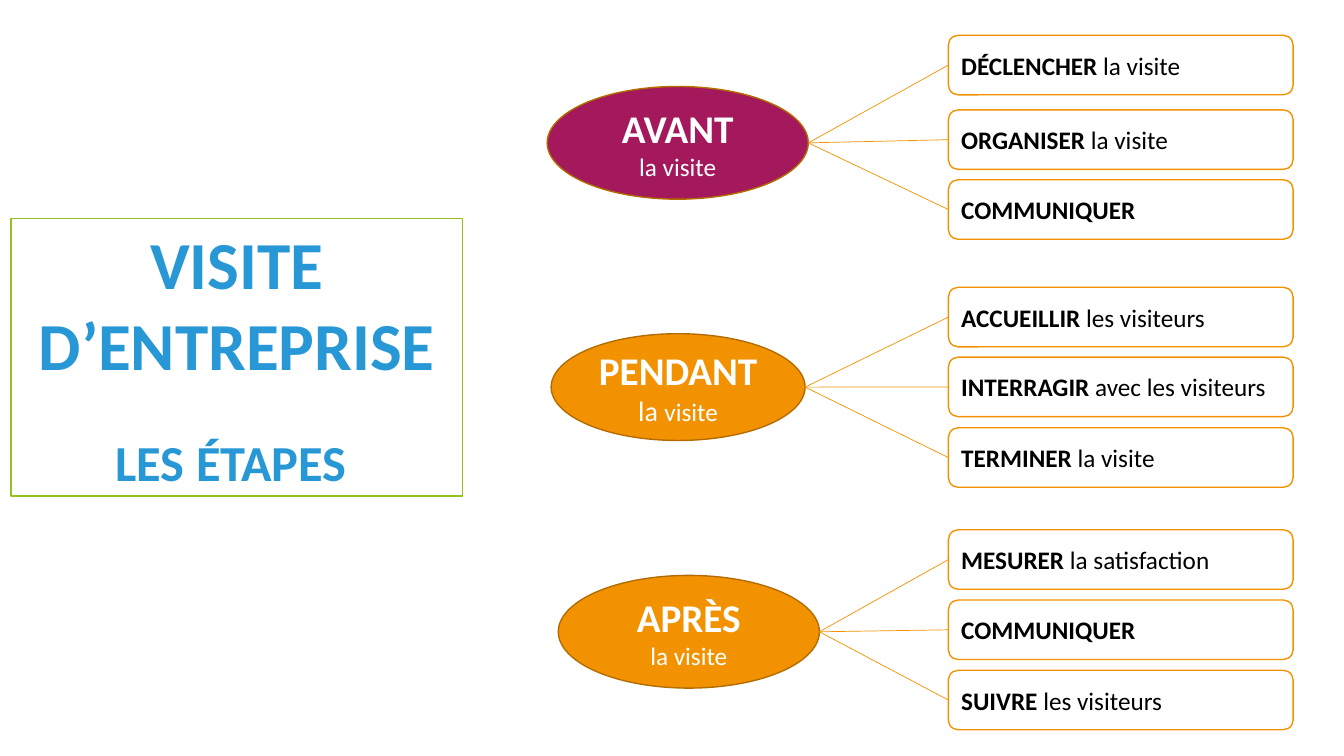
from lxml.etree import SubElement
from pptx import Presentation
from pptx.dml.color import RGBColor
from pptx.enum.shapes import MSO_CONNECTOR, MSO_SHAPE
from pptx.enum.text import MSO_ANCHOR, MSO_AUTO_SIZE, PP_ALIGN
from pptx.oxml.ns import qn
from pptx.util import Cm, Pt

COLORS = {
    "white": "FFFFFF", "black": "000000", "blue": "2897D5", "green": "95C11F",
    "orange": "F39200", "brown": "B46C00", "plum": "A3195B",
}
BOX_LEFT, BOX_WIDTH, BOX_HEIGHT = 23.9, 8.69, 1.5

# Each phase: name, (text, size) runs below it, fill, ellipse position, steps
PHASES = [
    ("AVANT", [("la visite", 18)], "plum", (13.79, 2.18, 6.58, 2.84),
     [(0.89, "DÉCLENCHER", " la visite"),
      (2.77, "ORGANISER", " la visite"),
      (4.53, "COMMUNIQUER", "")]),
    ("PENDANT", [("la ", 20), ("visite", 18)], "orange", (13.89, 8.41, 6.4, 2.69),
     [(7.24, "ACCUEILLIR", " les visiteurs"),
      (9.0, "INTERRAGIR", " avec les visiteurs"),
      (10.78, "TERMINER", " la visite")]),
    ("APRÈS", [("la visite", 18)], "orange", (14.07, 14.5, 6.58, 2.84),
     [(13.35, "MESURER", " la satisfaction"),
      (15.12, "COMMUNIQUER", ""),
      (16.89, "SUIVRE", " les visiteurs")]),
]


class StepMap:
    """Holds the style and the current slide."""

    font_name = "Calibri"

    def __init__(self, slide):
        self.slide = slide

    def color(self, name):
        return RGBColor.from_string(COLORS[name])

    def outline(self, shape, fill, line):
        shape.fill.solid()
        shape.fill.fore_color.rgb = self.color(fill)
        shape.line.color.rgb = self.color(line)
        shape.line.width = Pt(1)

    def add_text(self, paragraph, runs, color, alignment):
        """Put (text, size, bold) runs into one paragraph."""
        paragraph.alignment = alignment
        paragraph.font.name = self.font_name
        paragraph.font.color.rgb = self.color(color)
        for text, size, bold in runs:
            run = paragraph.add_run()
            run.text = text
            run.font.size = Pt(size)
            run.font.bold = bold

    def shape(self, kind, position, fill, line):
        shape = self.slide.shapes.add_shape(kind, *map(Cm, position))
        shape.shadow.inherit = False
        self.outline(shape, fill, line)
        shape.text_frame.word_wrap = True
        shape.text_frame.vertical_anchor = MSO_ANCHOR.MIDDLE
        return shape

    def title(self, position, lines, gap):
        title = self.slide.shapes.title
        title.left, title.top, title.width, title.height = map(Cm, position)
        geometry = SubElement(title.element.spPr, qn("a:prstGeom"), prst="roundRect")
        SubElement(geometry, qn("a:avLst"))
        self.outline(title, "white", "green")
        frame = title.text_frame
        frame.auto_size = MSO_AUTO_SIZE.NONE
        frame.vertical_anchor = MSO_ANCHOR.MIDDLE
        for index, (text, size) in enumerate(lines):
            paragraph = frame.add_paragraph() if index else frame.paragraphs[0]
            paragraph.space_before = Pt(gap if index else 0)
            self.add_text(paragraph, [(text, size, True)], "blue", PP_ALIGN.CENTER)

    def phase(self, name, below, fill, position):
        ellipse = self.shape(MSO_SHAPE.OVAL, position, fill, "brown")
        frame = ellipse.text_frame
        frame.margin_left = frame.margin_right = Cm(0.1)
        self.add_text(frame.paragraphs[0], [(name, 28, True)], "white", PP_ALIGN.CENTER)
        runs = [(text, size, False) for text, size in below]
        self.add_text(frame.add_paragraph(), runs, "white", PP_ALIGN.CENTER)
        return ellipse

    def step(self, top, action, rest):
        position = (BOX_LEFT, top, BOX_WIDTH, BOX_HEIGHT)
        box = self.shape(MSO_SHAPE.ROUNDED_RECTANGLE, position, "white", "orange")
        runs = [(action, 18, True)] + ([(rest, 18, False)] if rest else [])
        self.add_text(box.text_frame.paragraphs[0], runs, "black", PP_ALIGN.LEFT)
        return box

    def link(self, ellipse, box):
        start = (ellipse.left + ellipse.width, ellipse.top + ellipse.height // 2)
        connector = self.slide.shapes.add_connector(
            MSO_CONNECTOR.STRAIGHT, *start, box.left, box.top + box.height // 2)
        connector.end_connect(box, 1)
        connector.line.color.rgb = self.color("orange")
        connector.line.width = Pt(0.5)
        SubElement(connector.element.spPr, qn("a:effectLst"))


def main():
    presentation = Presentation()
    presentation.slide_width = Cm(33.87)
    presentation.slide_height = Cm(19.05)
    slide = presentation.slides.add_slide(presentation.slide_layouts[5])
    step_map = StepMap(slide)

    # Title on the left
    step_map.title((0.28, 5.51, 11.38, 6.99),
                   [("VISITE D’ENTREPRISE", 48), ("LES ÉTAPES ", 36)], gap=34)

    # Phases with their steps
    for name, below, fill, position, steps in PHASES:
        ellipse = step_map.phase(name, below, fill, position)
        for step in steps:
            step_map.link(ellipse, step_map.step(*step))

    presentation.save("out.pptx")


if __name__ == "__main__":
    main()
